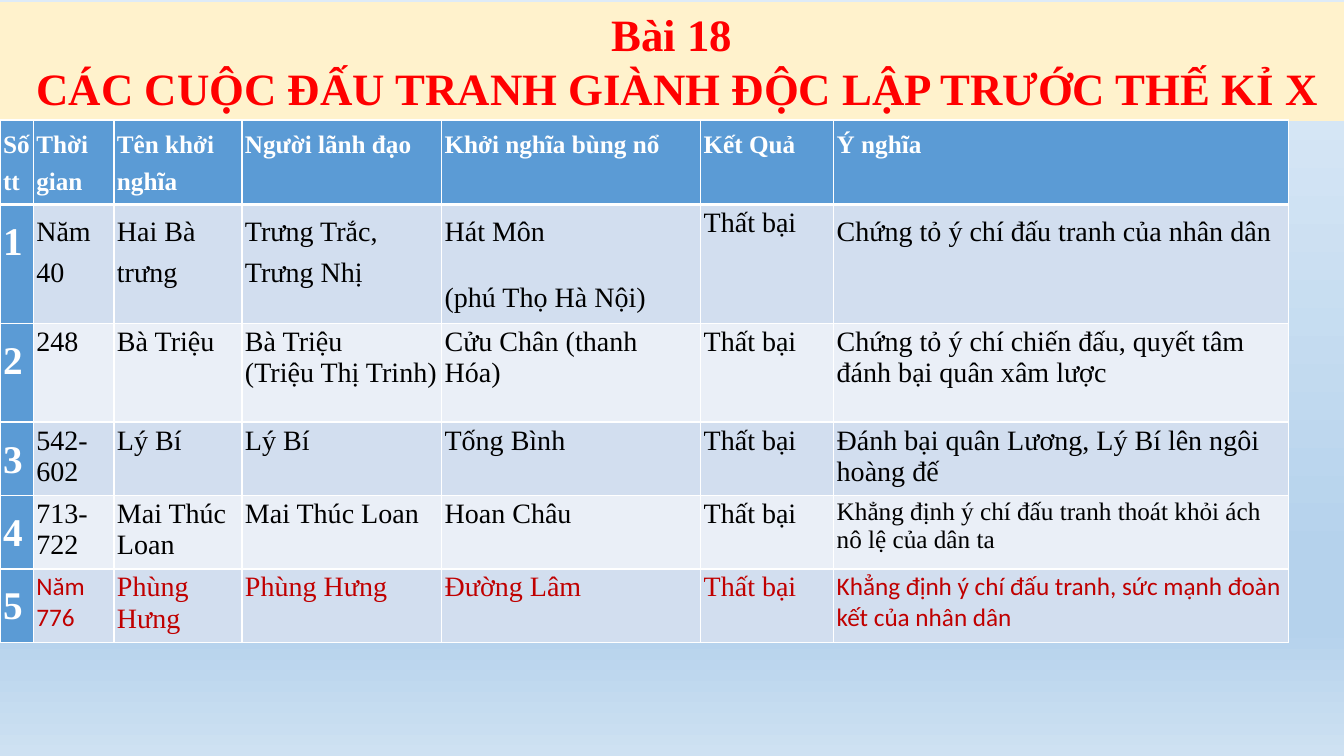
from copy import deepcopy

from lxml import etree
from pptx import Presentation, util as u
from pptx.dml.color import RGBColor
from pptx.enum import shapes, text
from pptx.oxml import ns

WHITE = RGBColor(255, 255, 255)
BLACK = RGBColor(0, 0, 0)
RED = RGBColor(255, 0, 0)
DARK_RED = RGBColor(192, 0, 0)
CREAM = RGBColor(0xFF, 0xF2, 0xCC)
BLUE = RGBColor(0x5B, 0x9B, 0xD5)
BANDS = [RGBColor(0xEA, 0xEF, 0xF7), RGBColor(0xD2, 0xDE, 0xEF)]
SKY = [(0, RGBColor(0xDE, 0xEB, 0xF7)), (0.74, RGBColor(0xB5, 0xD2, 0xEC)),
       (0.83, RGBColor(0xB5, 0xD2, 0xEC)), (1, RGBColor(0xCE, 0xE1, 0xF2))]
SERIF, SANS = "Times New Roman", "Calibri"

TITLE = ["Bài 18", " CÁC CUỘC ĐẤU TRANH GIÀNH ĐỘC LẬP TRƯỚC THẾ KỈ X"]
COLS = [0.33, 0.8, 1.27, 1.98, 2.57, 1.32, 4.51]
ROWS = [0.83, 1.16, 0.98, 0.72, 0.73, 0.72]
CELLS = [
    ["Số tt", "Thời gian", "Tên khởi nghĩa", "Người lãnh đạo",
     "Khởi nghĩa bùng nổ", "Kết Quả", "Ý nghĩa"],
    ["1", "Năm 40", "Hai Bà trưng", "Trưng Trắc, Trưng Nhị",
     "Hát Môn\n(phú Thọ Hà Nội)", "Thất bại",
     "Chứng tỏ ý chí đấu tranh của nhân dân"],
    ["2", "248", "Bà Triệu", "Bà Triệu\n(Triệu Thị Trinh)",
     "Cửu Chân (thanh Hóa)", "Thất bại",
     "Chứng tỏ ý chí chiến đấu, quyết tâm đánh bại quân xâm lược"],
    ["3", "542- 602", "Lý Bí", "Lý Bí", "Tống Bình", "Thất bại",
     "Đánh bại quân Lương, Lý Bí lên ngôi hoàng đế"],
    ["4", "713-722", "Mai Thúc Loan", "Mai Thúc Loan", "Hoan Châu", "Thất bại",
     "Khẳng định ý chí đấu tranh thoát khỏi ách nô lệ của dân ta"],
    ["5", "Năm 776", "Phùng Hưng", "Phùng Hưng", "Đường Lâm", "Thất bại",
     "Khẳng định ý chí đấu tranh, sức mạnh đoàn kết của nhân dân"],
]
SMALL = {(4, 6): SERIF, (5, 1): SANS, (5, 6): SANS}


def write(frame, lines, size, color, bold, face=SERIF):
    """Fill a text frame, one paragraph a line, and return the paragraphs."""
    for i, line in enumerate(lines):
        para = frame.add_paragraph() if i else frame.paragraphs[0]
        run = para.add_run()
        run.text = line
        run.font.size, run.font.name = u.Pt(size), face
        run.font.bold, run.font.color.rgb = bold, color
    return frame.paragraphs


def edge(cell, side, width):
    """Draw a white border on one side of a cell."""
    line = etree.SubElement(cell._tc.get_or_add_tcPr(), ns.qn("a:ln" + side),
                            w=str(u.Pt(width)))
    fill = etree.SubElement(line, ns.qn("a:solidFill"))
    etree.SubElement(fill, ns.qn("a:srgbClr"), val=str(WHITE))


deck = Presentation()
deck.slide_width, deck.slide_height = u.Inches(13.33), u.Inches(7.5)
slide = deck.slides.add_slide(deck.slide_layouts[6])

# Background
back = slide.background.fill
back.gradient()
back.gradient_angle = 270
stops = slide.element.find(".//" + ns.qn("a:gsLst"))
while len(stops) < len(SKY):
    stops.append(deepcopy(stops[0]))
for stop, (pos, color) in zip(back.gradient_stops, SKY):
    stop.position, stop.color.rgb = pos, color

# Title band
band = slide.shapes.add_shape(shapes.MSO_SHAPE.RECTANGLE, 0, u.Inches(0.02),
                              deck.slide_width, u.Inches(1.18))
band.shadow.inherit = False
band.fill.solid()
band.fill.fore_color.rgb = CREAM
band.line.fill.background()
frame = band.text_frame
frame.word_wrap = True
frame.auto_size = text.MSO_AUTO_SIZE.SHAPE_TO_FIT_TEXT
frame.vertical_anchor = text.MSO_ANCHOR.TOP
for para in write(frame, TITLE, 32, RED, True):
    para.alignment = text.PP_ALIGN.CENTER

# Table of uprisings
table = slide.shapes.add_table(len(ROWS), len(COLS), 0, u.Inches(1.19),
                               u.Inches(sum(COLS)), u.Inches(sum(ROWS))).table
for col, width in zip(table.columns, COLS):
    col.width = u.Inches(width)
for row, height in zip(table.rows, ROWS):
    row.height = u.Inches(height)

for r, words in enumerate(CELLS):
    for c, word in enumerate(words):
        cell = table.cell(r, c)
        cell.margin_left = cell.margin_right = u.Inches(0.03)
        cell.margin_top = cell.margin_bottom = u.Inches(0.03)
        for side in "LRTB":
            thick = (r, side) in [(0, "B"), (1, "T")]
            edge(cell, side, 3 if thick else 1)
        head = r == 0 or c == 0
        cell.fill.solid()
        cell.fill.fore_color.rgb = BLUE if head else BANDS[r % 2]

        if head:
            size, color = 18 if r == 0 else 28, WHITE
        else:
            size = 18 if (r, c) in SMALL else 20
            color = DARK_RED if r == 5 else BLACK
        paras = write(cell.text_frame, word.split("\n"), size, color, head,
                      SMALL.get((r, c), SERIF))
        if head or (r == 1 and c != 5):
            for para in paras:
                para.line_spacing = 1.3
                para.space_before, para.space_after = u.Pt(3), u.Pt(15)

deck.save("out.pptx")
